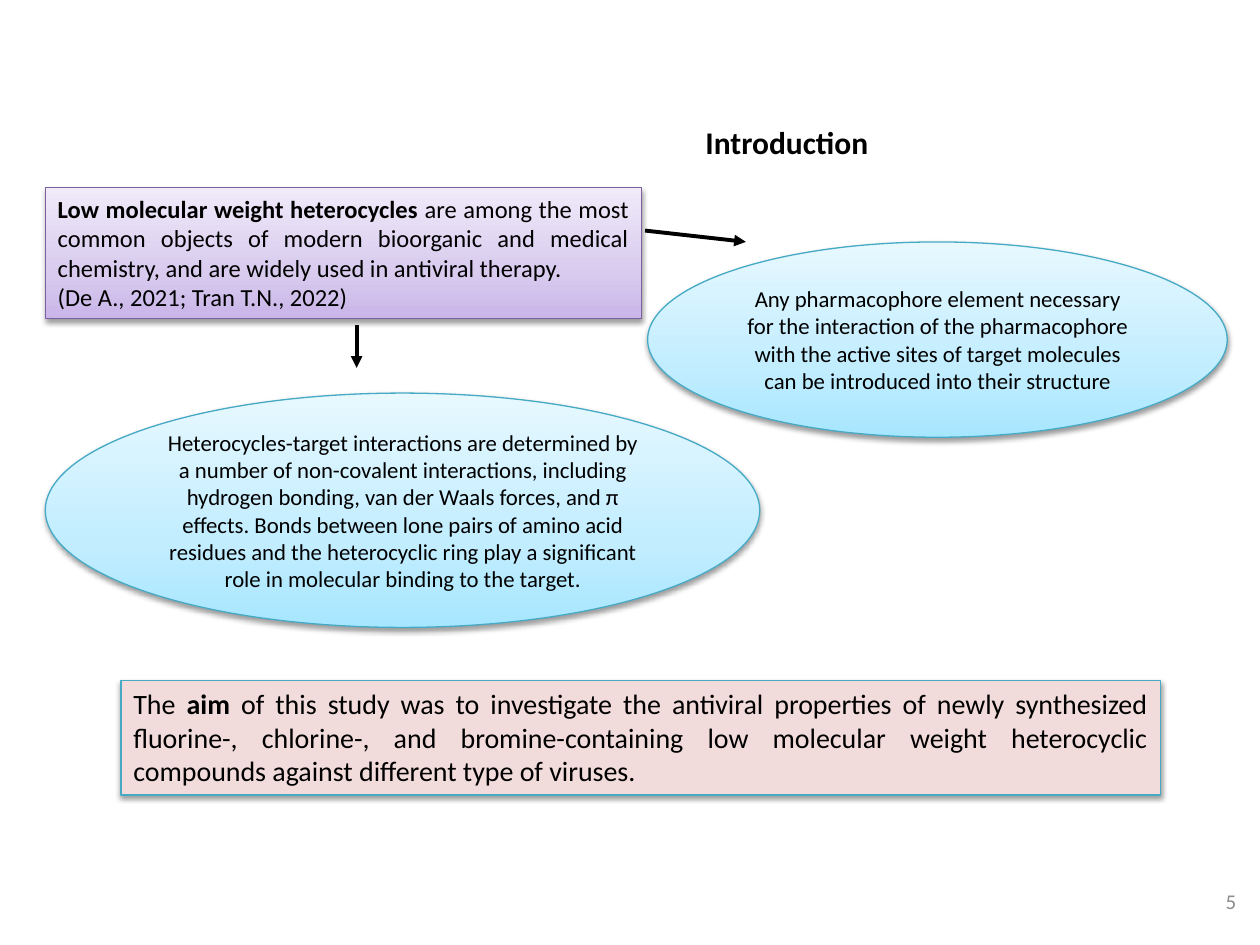
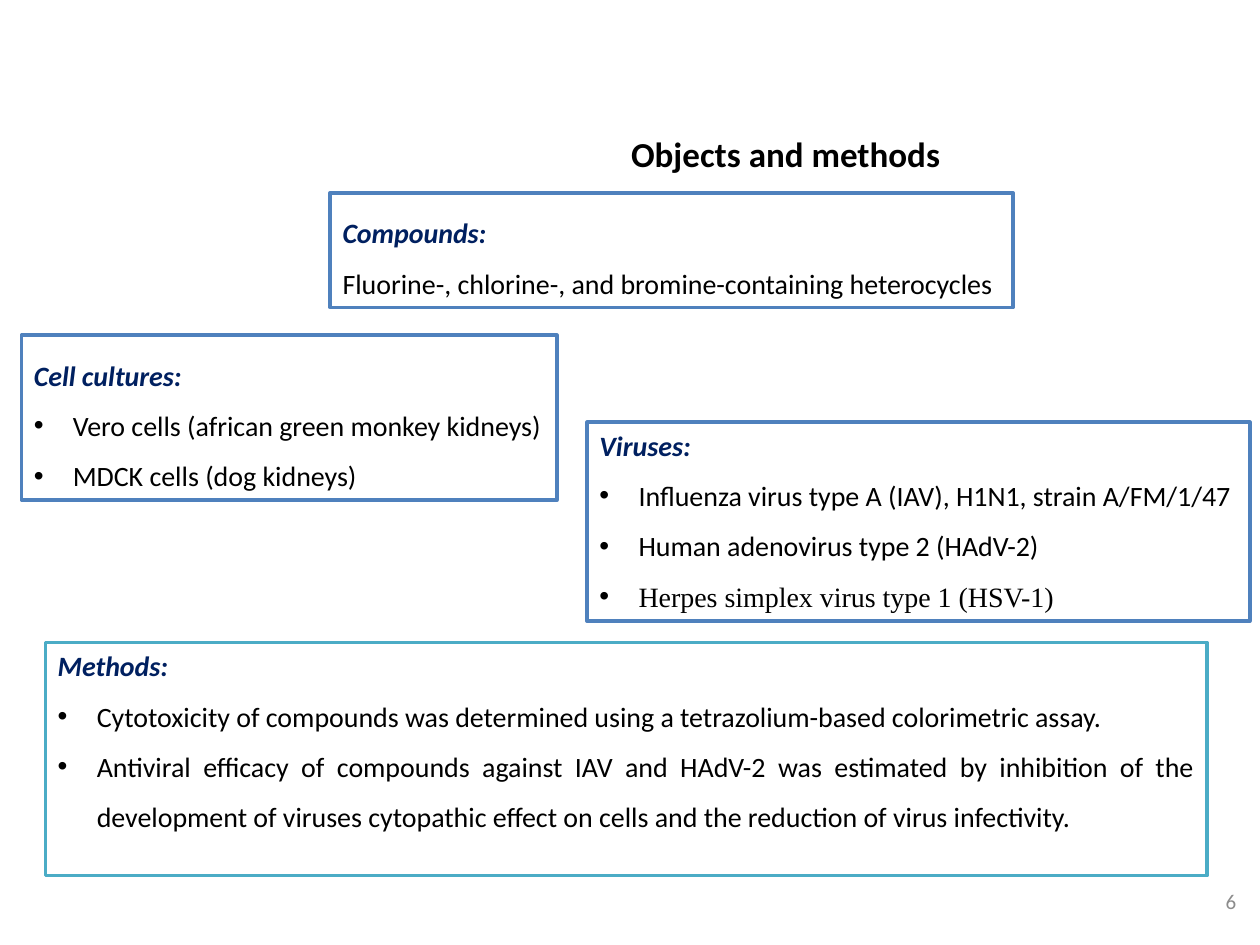
from dataclasses import dataclass

from lxml import etree
from pptx import Presentation
from pptx.dml.color import RGBColor
from pptx.enum.shapes import MSO_CONNECTOR as Connector, MSO_SHAPE as Shape
from pptx.enum.text import MSO_ANCHOR as Anchor, PP_ALIGN as Align
from pptx.oxml import parse_xml
from pptx.oxml.ns import nsdecls, qn
from pptx.util import Inches, Pt


@dataclass(frozen=True)
class Theme:
    font: str = "Calibri"
    serif: str = "Times New Roman"
    ink: str = "000000"
    heading: str = "002060"
    muted: str = "8C8C8C"
    white: str = "FFFFFF"
    rose: str = "F2DCDB"
    purple_line: str = "7D60A0"
    aqua_line: str = "46AAC5"
    blue_frame: str = "4F81BD"
    aqua_frame: str = "4BACC6"
    purple_fade: tuple = ("C9B5E8", "D8CBEE", "F0EAF9")
    aqua_fade: tuple = ("A7E6FF", "C1EDFF", "E7F8FF")
    fade_stops: tuple = (0, 35, 100)
    number_size: int = 12
    oval_size: int = 13
    lead_size: int = 14
    body_size: int = 16
    thin: float = 0.75
    frame: float = 2
    arrow: float = 2.25
    bullet_indent: float = 0.31


THEME = Theme()


def rgb(code):
    return RGBColor.from_string(code)


def add_span(para, text, size, color=THEME.ink, **formats):
    span = para.add_run()
    span.text = text
    for name, value in {"name": THEME.font, "size": Pt(size), **formats}.items():
        setattr(span.font, name, value)
    span.font.color.rgb = rgb(color)


def next_para(frame, **formats):
    """Return the empty first paragraph, or a new one after the text."""
    para = frame.paragraphs[0]
    if para.runs:
        para = frame.add_paragraph()
    for name, value in formats.items():
        setattr(para, name, value)
    return para


def add_bullet(para):
    indent = Inches(THEME.bullet_indent)
    props = para._p.get_or_add_pPr()
    props.set("marL", str(indent))
    props.set("indent", str(-indent))
    etree.SubElement(props, qn("a:buFont")).set("typeface", "Arial")
    etree.SubElement(props, qn("a:buChar")).set("char", "•")


def add_text(page, place, text, size, color=THEME.ink, align=Align.LEFT,
             anchor=Anchor.TOP, **formats):
    box = page.shapes.add_textbox(*map(Inches, place))
    box.text_frame.word_wrap = True
    box.text_frame.vertical_anchor = anchor
    para = next_para(box.text_frame, alignment=align)
    add_span(para, text, size, color, **formats)


def add_title(page, place, text, size):
    add_text(page, place, text, size, bold=True)


def add_page(deck, number):
    page = deck.slides.add_slide(deck.slide_layouts[6])
    add_text(page, (7.58, 6.95, 2.33, 0.4), str(number), THEME.number_size,
             THEME.muted, Align.RIGHT, Anchor.MIDDLE)
    return page


def add_panel(page, kind, place, fill, line, width, anchor=Anchor.TOP):
    """Add an outlined shape; a tuple as fill makes a fade from the bottom up."""
    panel = page.shapes.add_shape(kind, *map(Inches, place))
    panel.shadow.inherit = False
    if isinstance(fill, tuple):
        fade(panel, fill)
    else:
        panel.fill.solid()
        panel.fill.fore_color.rgb = rgb(fill)
    panel.line.color.rgb = rgb(line)
    panel.line.width = Pt(width)
    panel.text_frame.word_wrap = True
    panel.text_frame.vertical_anchor = anchor
    return panel


def fade(panel, colors):
    panel.fill.gradient()
    panel.fill.gradient_angle = 90
    stops = panel._element.spPr.find(qn("a:gradFill")).find(qn("a:gsLst"))
    for stop in list(stops):
        stops.remove(stop)
    for position, color in zip(THEME.fade_stops, colors):
        stops.append(parse_xml(
            f'<a:gs {nsdecls("a")} pos="{position * 1000}">'
            f'<a:srgbClr val="{color}"/></a:gs>'))


def add_shadow(panel):
    effects = panel._element.spPr.find(qn("a:effectLst"))
    effects.append(parse_xml(
        f'<a:outerShdw {nsdecls("a")} blurRad="{Pt(3.1)}" dist="{Pt(1.6)}" '
        f'dir="5400000" rotWithShape="0"><a:srgbClr val="{THEME.ink}">'
        '<a:alpha val="38000"/></a:srgbClr></a:outerShdw>'))


def add_raised_box(page, place, fill, line, size, paragraphs):
    """Each paragraph is a list of (text, bold) pairs."""
    box = add_panel(page, Shape.RECTANGLE, place, fill, line, THEME.thin)
    add_shadow(box)
    for spans in paragraphs:
        para = next_para(box.text_frame, alignment=Align.JUSTIFY)
        for text, bold in spans:
            add_span(para, text, size, bold=bold)


def add_oval(page, place, text):
    oval = add_panel(page, Shape.OVAL, place, THEME.aqua_fade, THEME.aqua_line,
                     THEME.thin, Anchor.MIDDLE)
    add_shadow(oval)
    para = next_para(oval.text_frame, alignment=Align.CENTER)
    add_span(para, text, THEME.oval_size)


def add_arrow(page, start, end):
    arrow = page.shapes.add_connector(Connector.STRAIGHT, *map(Inches, start + end))
    arrow.line.color.rgb = rgb(THEME.ink)
    arrow.line.width = Pt(THEME.arrow)
    line = arrow.line._get_or_add_ln()
    etree.SubElement(line, qn("a:tailEnd")).set("type", "triangle")
    etree.SubElement(arrow._element.spPr, qn("a:effectLst"))


def add_list_box(page, place, heading, items, frame=THEME.blue_frame,
                 heading_spacing=1.0, align=Align.LEFT, bullets=True, fonts=None):
    """Add a framed heading with items; fonts maps an item to its own font."""
    box = add_panel(page, Shape.RECTANGLE, place, THEME.white, frame, THEME.frame)
    para = next_para(box.text_frame, alignment=Align.LEFT,
                     line_spacing=heading_spacing)
    add_span(para, heading, THEME.body_size, THEME.heading, bold=True, italic=True)
    for item in items:
        para = next_para(box.text_frame, alignment=align, line_spacing=1.5)
        if bullets:
            add_bullet(para)
        add_span(para, item, THEME.body_size, name=(fonts or {}).get(item, THEME.font))


def build_introduction(deck):
    page = add_page(deck, 5)
    add_title(page, (5.5, 0.93, 2.71, 0.4), "Introduction", 18)
    add_raised_box(
        page, (0.36, 1.49, 4.73, 1.04), THEME.purple_fade, THEME.purple_line,
        THEME.lead_size,
        [[("Low molecular weight heterocycles ", True),
          ("are among the most common objects of modern bioorganic and medical "
           "chemistry, and are widely used in antiviral therapy.", False)],
         [("(De A., 2021; Tran T.N., 2022)", False)]])
    add_oval(page, (5.14, 1.92, 4.6, 1.55),
             "Any pharmacophore element necessary for the interaction of the "
             "pharmacophore with the active sites of target molecules can be "
             "introduced into their structure")
    add_arrow(page, (2.83, 2.58), (2.83, 2.92))
    add_arrow(page, (5.12, 1.83), (5.92, 1.92))
    add_oval(page, (0.36, 3.12, 5.67, 1.86),
             "Heterocycles-target interactions are determined by a number of "
             "non-covalent interactions, including hydrogen bonding, van der Waals "
             "forces, and π effects. Bonds between lone pairs of amino acid residues "
             "and the heterocyclic ring play a significant role in molecular binding "
             "to the target.")
    add_raised_box(
        page, (0.96, 5.4, 8.25, 0.91), THEME.rose, THEME.aqua_line, THEME.body_size,
        [[("The ", False), ("aim ", True),
          ("of this study was to investigate the antiviral properties of newly "
           "synthesized fluorine-, chlorine-, and bromine-containing low molecular "
           "weight heterocyclic compounds against different type of viruses.",
           False)]])


def build_methods(deck):
    page = add_page(deck, 6)
    add_list_box(
        page, (0.36, 5.1, 9.22, 1.85), "Methods:",
        ["Cytotoxicity of compounds was determined using a tetrazolium-based "
         "colorimetric assay.",
         "Antiviral efficacy of compounds against IAV and HAdV-2 was estimated by "
         "inhibition of the development of viruses cytopathic effect on cells and "
         "the reduction of virus infectivity."],
        frame=THEME.aqua_frame, align=Align.JUSTIFY)
    add_list_box(
        page, (0.17, 2.66, 4.25, 1.31), "Cell cultures:",
        ["Vero cells (african green monkey kidneys)", "MDCK cells (dog kidneys)"],
        heading_spacing=1.5)
    herpes = "Herpes simplex virus type 1 (HSV-1)"
    add_list_box(
        page, (4.66, 3.35, 5.26, 1.58), "Viruses:",
        ["Influenza virus type A (IAV), H1N1, strain A/FM/1/47",
         "Human adenovirus type 2 (HAdV-2)", herpes],
        fonts={herpes: THEME.serif})
    add_title(page, (4.91, 1, 2.75, 0.44), "Objects and methods", 20)
    add_list_box(
        page, (2.62, 1.53, 5.42, 0.91), "Compounds:",
        ["Fluorine-, chlorine-, and bromine-containing heterocycles"],
        heading_spacing=1.5, bullets=False)


def main():
    deck = Presentation()
    deck.slide_width = Inches(10)
    deck.slide_height = Inches(7.5)
    build_introduction(deck)
    build_methods(deck)
    deck.save("out.pptx")


if __name__ == "__main__":
    main()
